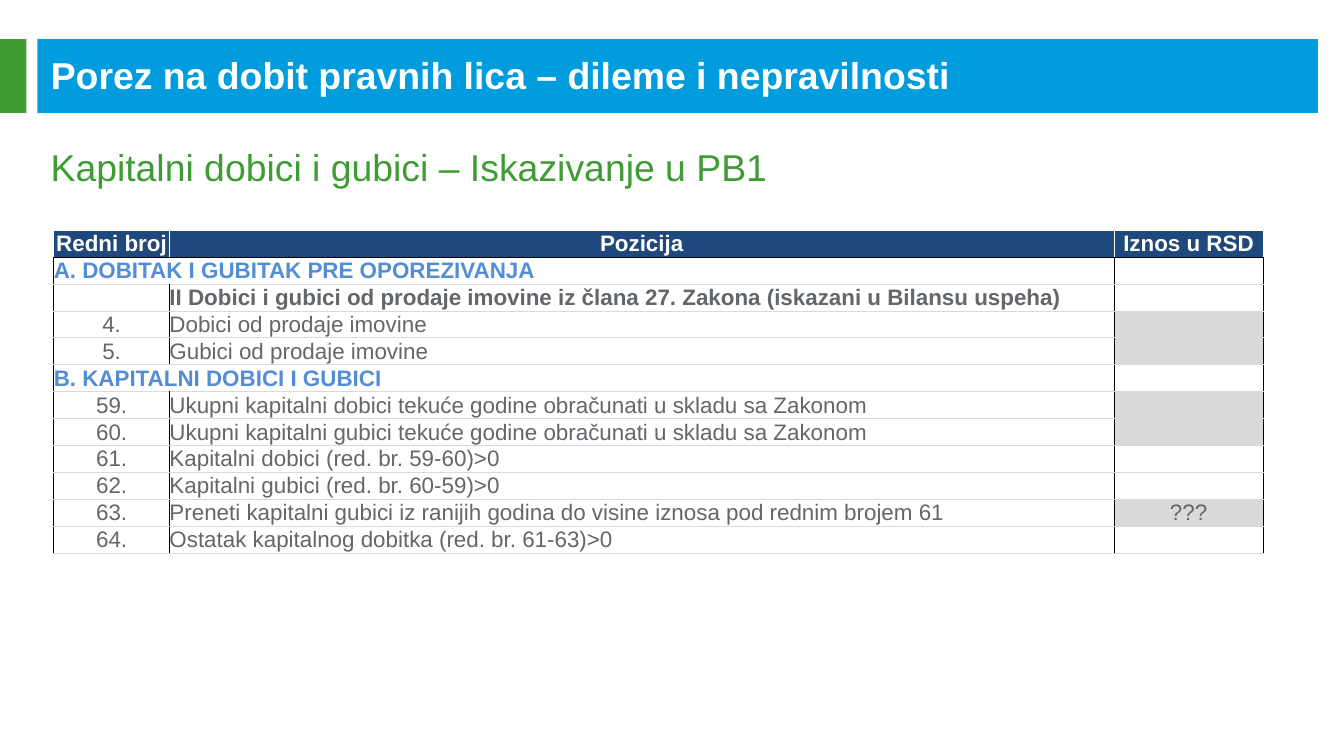
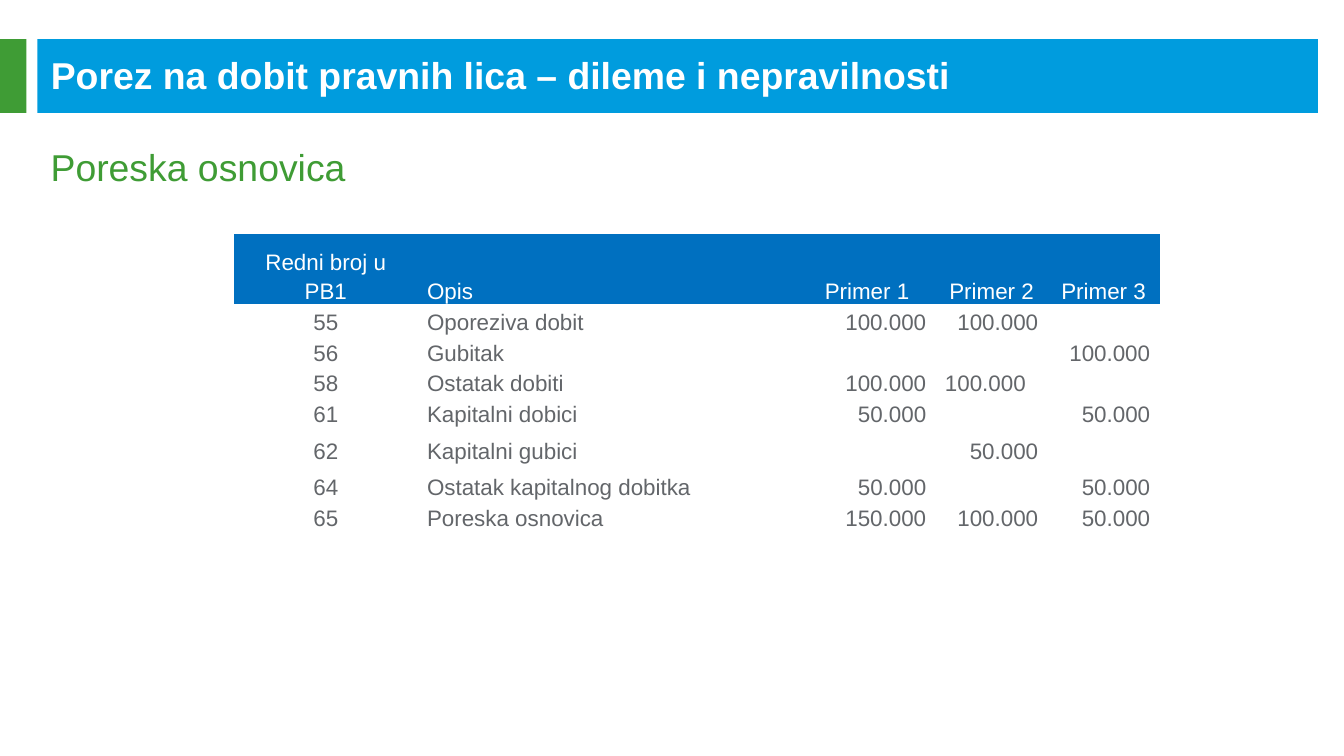
from lxml import etree
from pptx import Presentation
from pptx.dml.color import RGBColor
from pptx.enum import shapes, text
from pptx.oxml.ns import qn
from pptx.util import Pt

FONT = "Arial"
WHITE, BLACK, GREY, TEXT = "FFFFFF", "000000", "D9D9D9", "63666A"
BLUE, GREEN, NAVY = "009CDE", "3F9C35", "1F497D"
SECTION, HEADER_BLUE = "538DD5", "0070C0"
PLAIN_STYLE = "{2D5ABB26-0587-4C30-8999-92F81FD0307C}"
LEFT, CENTER, RIGHT = text.PP_ALIGN.LEFT, text.PP_ALIGN.CENTER, text.PP_ALIGN.RIGHT
MIDDLE, BOTTOM = text.MSO_ANCHOR.MIDDLE, text.MSO_ANCHOR.BOTTOM

DECK_TITLE = "Porez na dobit pravnih lica – dileme i nepravilnosti"

PB1_HEADER = ("Redni broj", "Pozicija", "Iznos u RSD")
PB1_ROWS = [
    ("A. DOBITAK I GUBITAK PRE OPOREZIVANJA", "", ""),
    ("", "II Dobici i gubici od prodaje imovine iz člana 27. Zakona (iskazani u Bilansu uspeha)", ""),
    ("4.", "Dobici od prodaje imovine", ""),
    ("5.", "Gubici od prodaje imovine", ""),
    ("B. KAPITALNI DOBICI I GUBICI", "", ""),
    ("59.", "Ukupni kapitalni dobici tekuće godine obračunati u skladu sa Zakonom", ""),
    ("60.", "Ukupni kapitalni gubici tekuće godine obračunati u skladu sa Zakonom", ""),
    ("61.", "Kapitalni dobici (red. br. 59-60)>0", ""),
    ("62.", "Kapitalni gubici (red. br. 60-59)>0", ""),
    ("63.", "Preneti kapitalni gubici iz ranijih godina do visine iznosa pod rednim brojem 61", "???"),
    ("64.", "Ostatak kapitalnog dobitka (red. br. 61-63)>0", ""),
]
SHADED_NUMBERS = {"4.", "5.", "59.", "60.", "63."}

BASE_HEADER = ("Redni broj u PB1", "Opis", "Primer 1", "Primer 2", "Primer 3")
BASE_ROWS = [
    ("55", "Oporeziva dobit", "100.000", "100.000", ""),
    ("56", "Gubitak", "", "", "100.000"),
    ("58", "Ostatak dobiti", "100.000", "100.000", ""),
    ("61", "Kapitalni dobici", "50.000", "", "50.000"),
    ("62", "Kapitalni gubici", "", "50.000", ""),
    ("64", "Ostatak kapitalnog dobitka", "50.000", "", "50.000"),
    ("65", "Poreska osnovica", "150.000", "100.000", "50.000"),
]
TALL_NUMBERS = {"62", "64"}


def rgb(color):
    return RGBColor.from_string(color)


def style(p, size, color, bold=False, align=LEFT):
    p.alignment = align
    p.font.name = FONT
    p.font.size = Pt(size)
    p.font.bold = bold
    p.font.color.rgb = rgb(color)


def add_band(s, x, width, color):
    sp = s.shapes.add_shape(shapes.MSO_SHAPE.RECTANGLE, Pt(x), Pt(21), Pt(width), Pt(39.5))
    sp.shadow.inherit = False
    sp.fill.solid()
    sp.fill.fore_color.rgb = rgb(color)
    sp.line.fill.background()
    s.shapes._spTree.insert(2, sp._element)


def add_slide(prs, subtitle):
    s = prs.slides.add_slide(prs.slide_layouts[5])
    add_band(s, 0, 14.2, GREEN)
    add_band(s, 20, 686, BLUE)

    title = s.shapes.title
    title.left, title.top, title.width, title.height = Pt(20), Pt(29), Pt(680), Pt(22)
    tf = title.text_frame
    tf.text = DECK_TITLE
    tf.auto_size = text.MSO_AUTO_SIZE.NONE
    tf.vertical_anchor = MIDDLE
    style(tf.paragraphs[0], 20, WHITE, bold=True)

    tf = s.shapes.add_textbox(Pt(20), Pt(73.5), Pt(686), Pt(38)).text_frame
    tf.word_wrap = True
    tf.text = subtitle
    style(tf.paragraphs[0], 20, GREEN)
    return s


def add_table(s, x, y, widths, heights):
    frame = s.shapes.add_table(len(heights), len(widths), Pt(x), Pt(y),
                               Pt(sum(widths)), Pt(sum(heights)))
    table = frame.table
    table.first_row = table.horz_banding = False
    table._tbl.tblPr.find(qn("a:tableStyleId")).text = PLAIN_STYLE
    for column, width in zip(table.columns, widths):
        column.width = Pt(width)
    for row, height in zip(table.rows, heights):
        row.height = Pt(height)
    return table


def fill_cell(cell, content, color, align, anchor, side=0, bold=False, fill=None, spacing=None):
    cell.margin_left = cell.margin_right = Pt(side)
    cell.margin_top = cell.margin_bottom = 0
    cell.vertical_anchor = anchor
    if fill:
        cell.fill.solid()
        cell.fill.fore_color.rgb = rgb(fill)
    else:
        cell.fill.background()
    p = cell.text_frame.paragraphs[0]
    if content:
        p.text = content
    else:
        etree.SubElement(p._p, qn("a:endParaRPr"), sz="1200")
    style(p, 12, color, bold, align)
    if spacing:
        p.line_spacing = spacing


def set_borders(cell, left, right, top, bottom):
    tcPr = cell._tc.get_or_add_tcPr()
    for i, (side, color) in enumerate(zip("LRTB", (left, right, top, bottom))):
        ln = etree.Element(qn(f"a:ln{side}"), w=str(Pt(0.5)))
        solid = etree.SubElement(ln, qn("a:solidFill"))
        etree.SubElement(solid, qn("a:srgbClr"), val=color)
        tcPr.insert(i, ln)


def add_pb1_table(s):
    rows = [PB1_HEADER] + PB1_ROWS
    table = add_table(s, 28.8, 123.3, (62, 506, 80), [13.5] * len(rows))
    for i, row in enumerate(rows):
        header = i == 0
        section = not header and len(row[0]) > 3
        if section:
            table.cell(i, 0).merge(table.cell(i, 1))
        for j, content in enumerate(row):
            cell = table.cell(i, j)
            color = WHITE if header else SECTION if section else TEXT
            align = LEFT if section or (j == 1 and not header) else CENTER
            shaded = j == 2 and row[0] in SHADED_NUMBERS
            fill_cell(cell, content, color, align, MIDDLE,
                      bold=header or section or not row[0],
                      fill=NAVY if header else GREY if shaded else None)
            if header:
                set_borders(cell, WHITE, WHITE, WHITE, BLACK)
            elif not cell.is_spanned:
                set_borders(cell, BLACK, BLACK, BLACK if i == 1 else GREY, GREY)


def add_base_table(s):
    heights = [37.5] + [19.5 if row[0] in TALL_NUMBERS else 15.4 for row in BASE_ROWS]
    table = add_table(s, 125.3, 125.3, (98.5, 204, 73.5, 60, 60), heights)
    for i, row in enumerate([BASE_HEADER] + BASE_ROWS):
        header = i == 0
        for j, content in enumerate(row):
            if j == 1 or (row[0] == "58" and j == 3):
                align = LEFT
            else:
                align = CENTER if header or j == 0 else RIGHT
            fill_cell(table.cell(i, j), content, WHITE if header else TEXT, align, BOTTOM,
                      side=5, fill=HEADER_BLUE if header else None, spacing=1.15)


def main():
    prs = Presentation()
    prs.slide_width, prs.slide_height = Pt(720), Pt(405)
    add_pb1_table(add_slide(prs, "Kapitalni dobici i gubici – Iskazivanje u PB1"))
    add_base_table(add_slide(prs, "Poreska osnovica"))
    prs.save("out.pptx")


if __name__ == "__main__":
    main()
